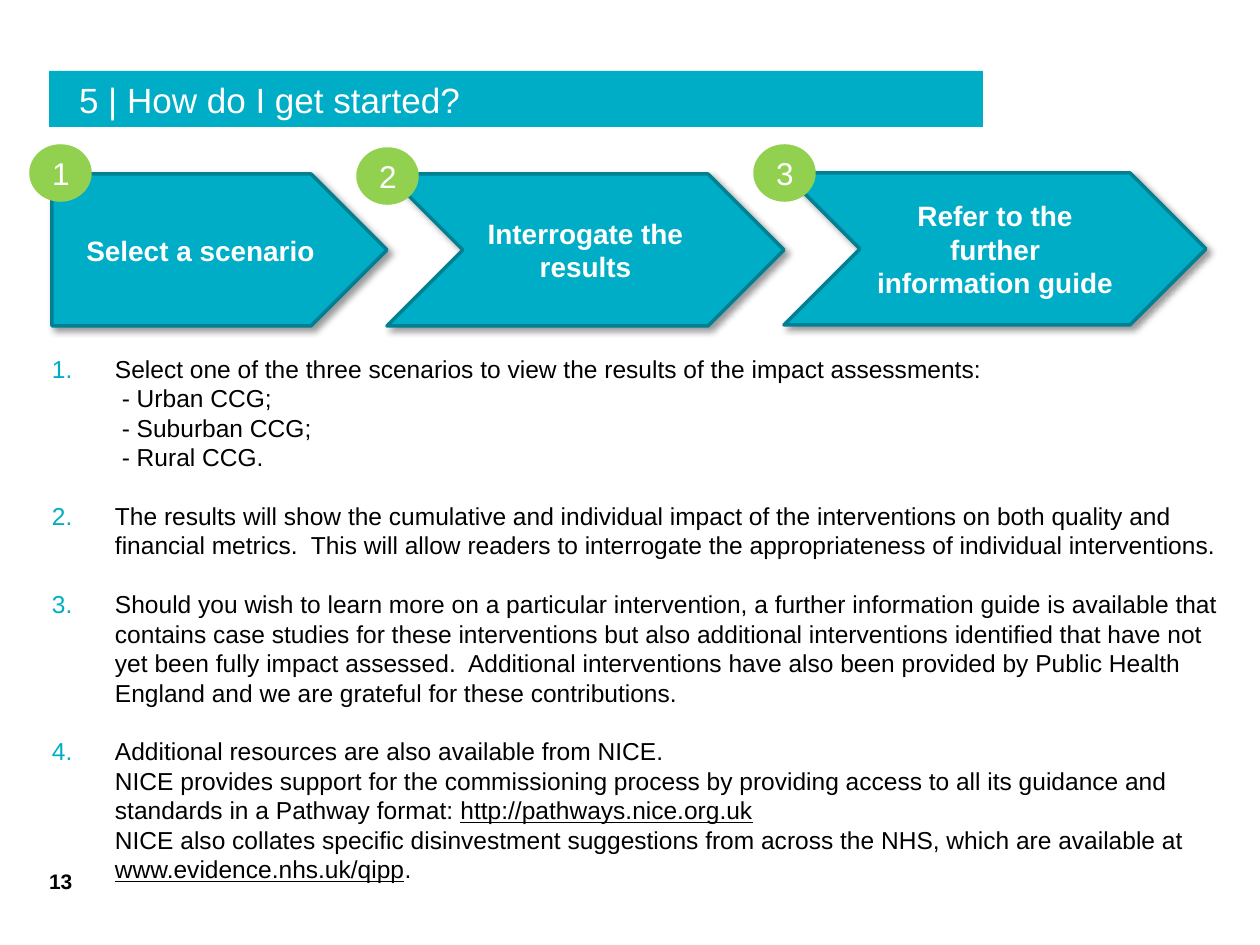
from lxml import etree
from pptx import Presentation
from pptx.dml.color import RGBColor
from pptx.enum.shapes import MSO_SHAPE
from pptx.enum.text import MSO_ANCHOR, MSO_AUTO_SIZE, PP_ALIGN
from pptx.oxml.ns import qn
from pptx.util import Emu, Pt

PLATE, CHEVRON = MSO_SHAPE.PENTAGON, MSO_SHAPE.CHEVRON
BADGE = MSO_SHAPE.FLOWCHART_CONNECTOR
MIDDLE, BOTTOM = MSO_ANCHOR.MIDDLE, MSO_ANCHOR.BOTTOM
LEFT, CENTER = PP_ALIGN.LEFT, PP_ALIGN.CENTER
NO_FIT, GROW = MSO_AUTO_SIZE.NONE, MSO_AUTO_SIZE.SHAPE_TO_FIT_TEXT

COLOURS = {"teal": "00ADC6", "dark_teal": "008092", "green": "92D050",
           "white": "FFFFFF", "black": "000000"}
FONT = "Arial"
LINK_SIGNS = ("http", "www")

# Step label, shape, left, top, width, then badge left and top
STEPS = [
    ("Select a scenario", PLATE, 52, 174, 335, 31, 146),
    ("Interrogate the results", CHEVRON, 387, 174, 397, 358, 149),
    ("Refer to the further information guide", CHEVRON, 784, 173, 422, 755, 146),
]

# Each item is a list of lines, each line a list of spans
ITEMS = [
    [["Select one of the three scenarios to view the results of the impact assessments:"],
     [" - Urban CCG;"], [" - Suburban CCG;"], [" - Rural CCG."]],
    [["The results will show the cumulative and individual impact of the interventions "
      "on both quality and financial metrics.  This will allow readers to interrogate "
      "the appropriateness of individual interventions."]],
    [["Should you wish to learn more on a particular intervention, a further information "
      "guide is available that contains case studies for these interventions but also "
      "additional interventions identified that have not yet been fully impact assessed.  "
      "Additional interventions have also been provided by Public Health England and we "
      "are grateful for these contributions."]],
    [["Additional resources are also available from NICE."],
     ["NICE provides support for the commissioning process by providing access to all its "
      "guidance and standards in a Pathway format: ", "http://pathways.nice.org.uk"],
     ["NICE also collates specific disinvestment suggestions from across the NHS, which "
      "are available at ", "www.evidence.nhs.uk/qipp", "."]],
]


def px(count):
    return Emu(round(count * 914400 / 126))


def colour(name):
    return RGBColor.from_string(COLOURS[name])


def set_font(para, size, name, bold=False):
    font = para.font
    font.name, font.size, font.bold = FONT, Pt(size), bold
    font.color.rgb = colour(name)


def set_margins(frame, left=0):
    frame.margin_left = px(left)
    frame.margin_top = frame.margin_right = frame.margin_bottom = 0
    frame.word_wrap = True


def add_shadow(shape):
    effects = shape._element.spPr.find(qn("a:effectLst"))
    outer = etree.SubElement(effects, qn("a:outerShdw"), blurRad=str(Pt(4)),
                             dist=str(Pt(3)), dir=str(45 * 60000),
                             algn="tl", rotWithShape="0")
    shade = etree.SubElement(outer, qn("a:srgbClr"), val=COLOURS["black"])
    etree.SubElement(shade, qn("a:alpha"), val="40000")


def add_title(page, text):
    title = page.shapes.title
    title.left, title.top, title.width, title.height = map(px, (49, 71, 934, 56))
    title.fill.solid()
    title.fill.fore_color.rgb = colour("teal")
    frame = title.text_frame
    frame.text = text
    frame.auto_size = NO_FIT
    frame.vertical_anchor = MIDDLE
    set_margins(frame, 30)
    para = frame.paragraphs[0]
    para.alignment = LEFT
    set_font(para, 20, "white")


def add_label_shape(page, kind, place, text, fill, line, size, bold):
    shape = page.shapes.add_shape(kind, *map(px, place))
    shape.shadow.inherit = False
    shape.fill.solid()
    shape.fill.fore_color.rgb = colour(fill)
    shape.line.color.rgb = colour(line)
    shape.line.width = Pt(2)
    frame = shape.text_frame
    frame.text = text
    frame.vertical_anchor = MIDDLE
    para = frame.paragraphs[0]
    para.alignment = CENTER
    set_font(para, size, "white", bold)
    return shape


def add_steps(page):
    for label, kind, left, top, width, _, _ in STEPS:
        arrow = add_label_shape(page, kind, (left, top, width, 152), label,
                                "teal", "dark_teal", 16, True)
        add_shadow(arrow)
    for number, (*_, left, top) in enumerate(STEPS, 1):
        add_label_shape(page, BADGE, (left, top, 59, 54), str(number),
                        "green", "green", 18, False)


def add_numbering(para):
    props = para._p.get_or_add_pPr()
    props.set("marL", str(px(63)))
    props.set("indent", str(px(-63)))
    tint = etree.SubElement(props, qn("a:buClr"))
    etree.SubElement(tint, qn("a:srgbClr"), val=COLOURS["teal"])
    etree.SubElement(props, qn("a:buFont"), typeface=FONT)
    etree.SubElement(props, qn("a:buAutoNum"), type="arabicPeriod")


def add_numbered_list(page, items):
    box = page.shapes.add_textbox(*map(px, (52, 354, 1181, 564)))
    frame = box.text_frame
    set_margins(frame)
    frame.auto_size = GROW
    for index, lines in enumerate(items):
        para = frame.add_paragraph() if index else frame.paragraphs[0]
        add_numbering(para)
        set_font(para, 14, "black")
        if index < len(items) - 1:
            para.space_after = Pt(16.8)
        for row, spans in enumerate(lines):
            if row:
                para.add_line_break()
            for text in spans:
                span = para.add_run()
                span.text = text
                if text.startswith(LINK_SIGNS):
                    span.font.underline = True


def add_page_number(page, text):
    box = page.shapes.add_textbox(*map(px, (49, 869, 42, 25)))
    frame = box.text_frame
    set_margins(frame)
    frame.vertical_anchor = BOTTOM
    frame.text = text
    set_font(frame.paragraphs[0], 12, "black", True)


def main():
    deck = Presentation()
    deck.slide_width, deck.slide_height = px(1260), px(945)
    page = deck.slides.add_slide(deck.slide_layouts[5])
    add_title(page, "5 | How do I get started?")
    add_page_number(page, "13")
    add_steps(page)
    add_numbered_list(page, ITEMS)
    deck.save("out.pptx")


if __name__ == "__main__":
    main()
